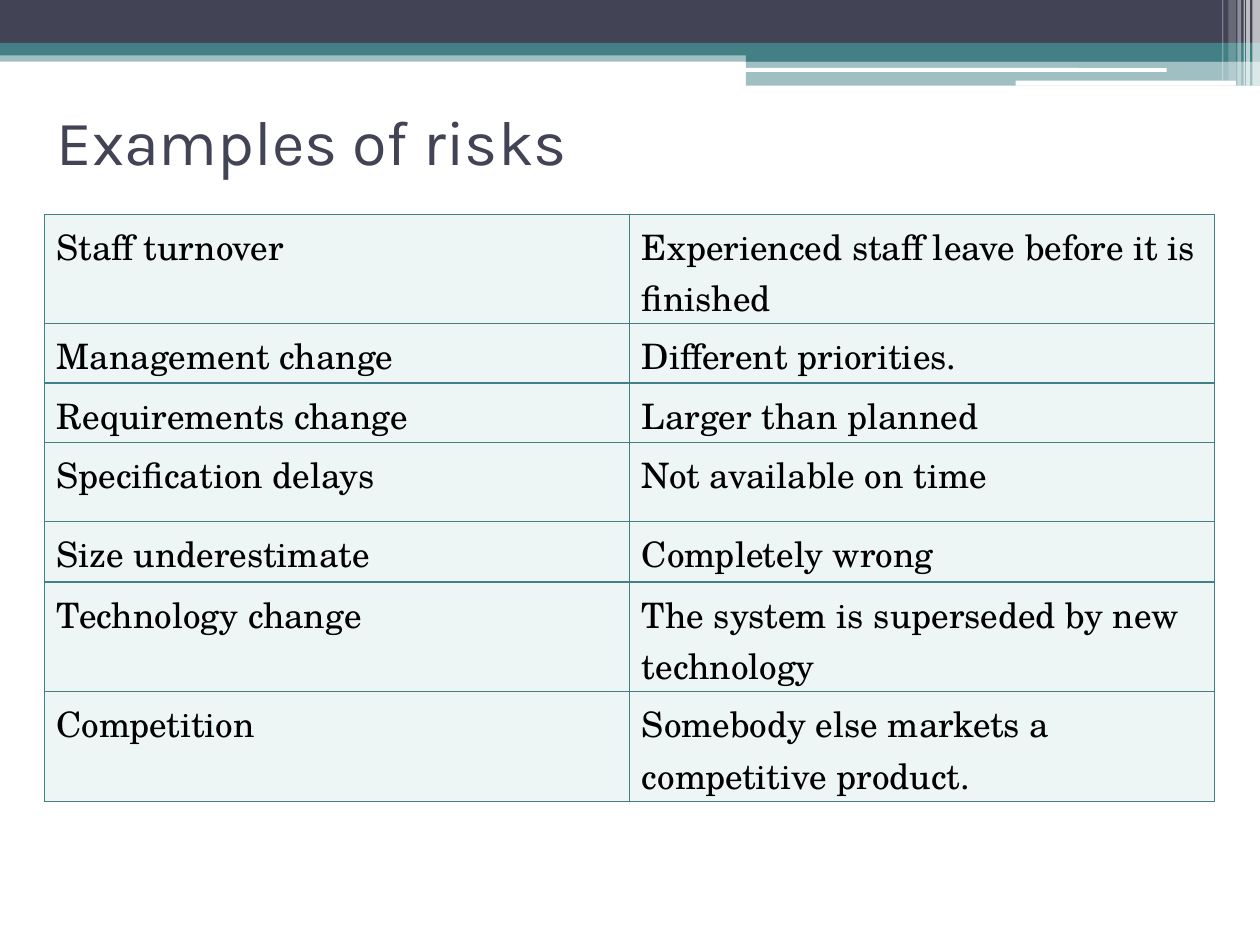
from lxml import etree
from pptx import Presentation
from pptx.dml.color import RGBColor
from pptx.enum import shapes, text
from pptx.oxml import ns
from pptx.util import Inches, Pt

COLORS = {"navy": "424456", "teal": "438086", "white": "FFFFFF",
          "mint": "EDF5F5", "black": "000000"}
TITLE = "Examples of risks"
RISKS = [
    ("Staff turnover", "Experienced staff leave before it is finished", 0.87),
    ("Management change", "Different priorities.", 0.47),
    ("Requirements change", "Larger than planned", 0.47),
    ("Specification delays", "Not available on time", 0.63),
    ("Size underestimate", "Completely wrong", 0.48),
    ("Technology change", "The system is superseded by new technology", 0.87),
    ("Competition", "Somebody else markets a competitive product.", 0.87),
]
BANDS = [
    ("RECTANGLE", 0, 0.4, 10, 0.09, "teal", 50),
    ("RECTANGLE", 0, 0, 10, 0.34, "navy", 100),
    ("RECTANGLE", 0, 0.34, 10, 0.1, "teal", 100),
    ("RECTANGLE", 5.92, 0.39, 4.08, 0.1, "teal", 100),
    ("RECTANGLE", 5.92, 0.48, 4.08, 0.2, "teal", 50),
    ("ROUNDED_RECTANGLE", 5.91, 0.54, 3.35, 0.03, "white", 100),
    ("ROUNDED_RECTANGLE", 8.06, 0.64, 1.75, 0.04, "white", 100),
]
STRIPES = [(9.94, 0.06, 0.68, 65), (9.89, 0.03, 0.68, 65), (9.87, 0.01, 0.68, 60),
           (9.82, 0.03, 0.68, 40), (9.75, 0.06, 0.64, 20), (9.7, 0.01, 0.64, 30)]
LEFT, WIDTH = 0.35, 9.29


def rgb(name):
    return RGBColor.from_string(COLORS[name])


def style_font(font, **values):
    for key, value in values.items():
        setattr(font, key, value)


def add_band(page, kind, left, top, width, height, color, opacity):
    band = page.shapes.add_shape(getattr(shapes.MSO_SHAPE, kind),
                                 *map(Inches, (left, top, width, height)))
    band.shadow.inherit = False
    band.fill.solid()
    band.fill.fore_color.rgb = rgb(color)
    band.line.fill.background()
    if opacity < 100:
        color_node = band.fill._xPr.find(".//" + ns.qn("a:srgbClr"))
        etree.SubElement(color_node, ns.qn("a:alpha"), val=str(opacity * 1000))


def add_borders(cell):
    properties = cell._tc.get_or_add_tcPr()
    for position, side in enumerate(("lnL", "lnR", "lnT", "lnB")):
        line = etree.Element(ns.qn("a:" + side), w=str(Pt(0.75)))
        fill = etree.SubElement(line, ns.qn("a:solidFill"))
        etree.SubElement(fill, ns.qn("a:srgbClr"), val=COLORS["teal"])
        properties.insert(position, line)


def fill_cell(cell, words):
    margins = {"margin_left": 0.1, "margin_top": 0.05,
               "margin_right": 0.1, "margin_bottom": 0}
    for key, value in margins.items():
        setattr(cell, key, Inches(value))
    cell.text = words
    style_font(cell.text_frame.paragraphs[0].runs[0].font,
               name="TeX Gyre Schola", size=Pt(20), bold=False)
    cell.text_frame.paragraphs[0].runs[0].font.color.rgb = rgb("black")
    cell.fill.solid()
    cell.fill.fore_color.rgb = rgb("mint")
    add_borders(cell)


def add_title(page):
    title = page.shapes.title
    place = {"left": LEFT, "top": 0.76, "width": WIDTH, "height": 0.71}
    for key, value in place.items():
        setattr(title, key, Inches(value))
    title.text = TITLE
    title.text_frame.vertical_anchor = text.MSO_ANCHOR.MIDDLE
    para = title.text_frame.paragraphs[0]
    para.alignment = text.PP_ALIGN.LEFT
    style_font(para.runs[0].font, name="Karla", size=Pt(36))
    para.runs[0].font.color.rgb = rgb("navy")


def add_risks(page):
    height = sum(risk[2] for risk in RISKS)
    table = page.shapes.add_table(len(RISKS), 2, Inches(LEFT), Inches(1.7),
                                  Inches(WIDTH), Inches(height)).table
    table.first_row = table.horz_banding = False
    for row, (*words, row_height) in zip(table.rows, RISKS):
        row.height = Inches(row_height)
        for cell, phrase in zip(row.cells, words):
            fill_cell(cell, phrase)


def main():
    deck = Presentation()
    deck.slide_width, deck.slide_height = Inches(10), Inches(7.5)
    page = deck.slides.add_slide(deck.slide_layouts[5])
    for band in BANDS:
        add_band(page, *band)
    for left, width, height, opacity in STRIPES:
        add_band(page, "RECTANGLE", left, 0, width, height, "white", opacity)
    add_title(page)
    add_risks(page)
    deck.save("out.pptx")


if __name__ == "__main__":
    main()
